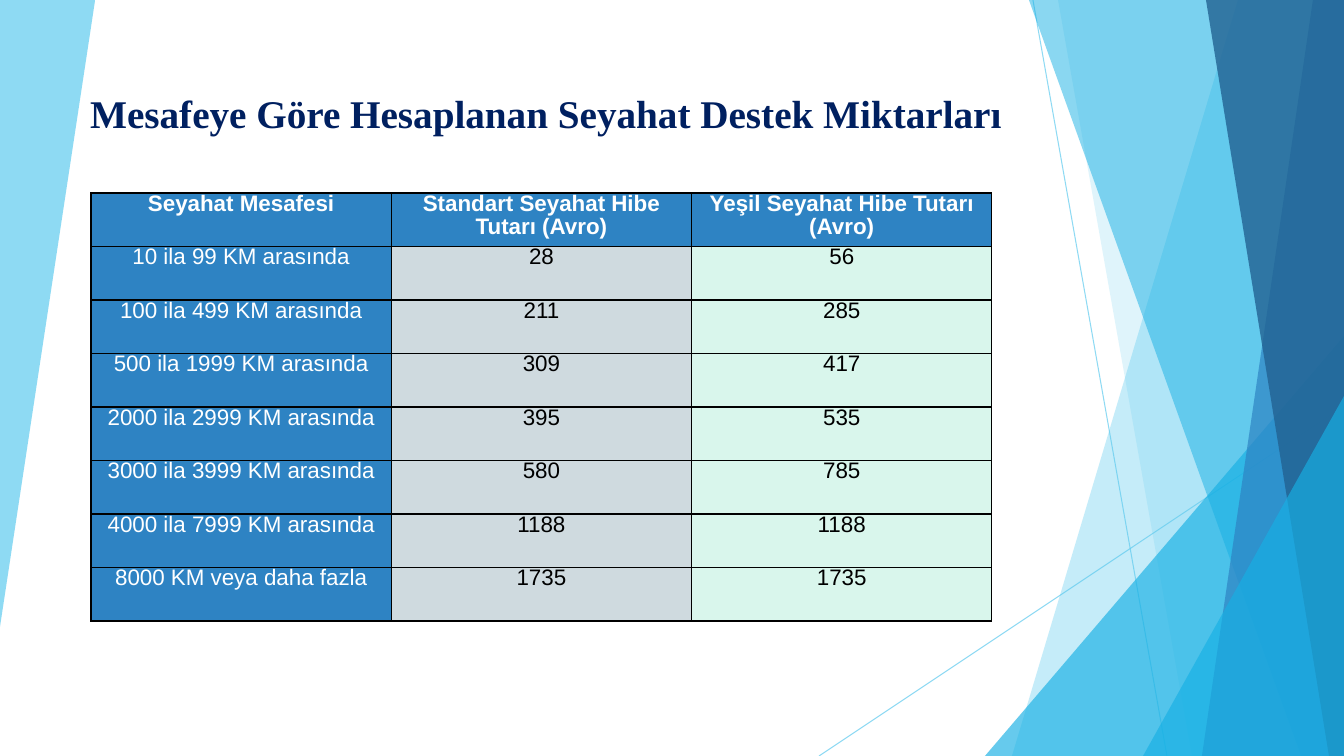
"""Builds the slide with the travel support amounts by distance."""
import pptx
import pptx.dml.color
import pptx.enum.shapes
import pptx.enum.text
import pptx.oxml
import pptx.oxml.ns
import pptx.util

PIXEL = 914400 / 100.8
NAMESPACE = pptx.oxml.ns.nsdecls("a")


def px(*lengths):
    return [pptx.util.Emu(round(length * PIXEL)) for length in lengths]


def paint(color_owner, color, opacity=100):
    if hasattr(color_owner, "solid"):
        color_owner.solid()
        color_owner = color_owner.fore_color
    color_owner.rgb = pptx.dml.color.RGBColor.from_string(color)
    if opacity < 100:
        color_owner._xFill[0].append(pptx.oxml.parse_xml(
            f'<a:alpha {NAMESPACE} val="{opacity * 1000}"/>'))


presentation = pptx.Presentation()
presentation.slide_width, presentation.slide_height = px(1344, 756)
slide = presentation.slides.add_slide(presentation.slide_layouts[5])
shapes = slide.shapes

rays = [((1033, 0), (1167, 756)), ((1344, 406), (819, 756))]
for start, end in rays:
    ray = shapes.add_connector(
        pptx.enum.shapes.MSO_CONNECTOR.STRAIGHT, *px(*start, *end))
    ray.line.width = pptx.util.Pt(0.75)
    paint(ray.line.fill, "5FCBEF", 70)
    ray._element.spPr.append(pptx.oxml.parse_xml(f"<a:effectLst {NAMESPACE}/>"))

facets = [
    ("outline", [(0, 0), (95, 0), (95, 1), (0, 627)], "5FCBEF", 70),
    ("outline", [(1238, 0), (1344, 0), (1344, 756), (1012, 756)], "5FCBEF", 36),
    ("outline", [(1058, 0), (1344, 0), (1344, 756), (1192, 756)], "5FCBEF", 20),
    ("triangle", (985, 336, 359, 420), "17B0E4", 66),
    ("outline", [(1029, 0), (1344, 0), (1344, 756), (1301, 756)], "17B0E4", 50),
    ("outline", [(1313, 0), (1344, 0), (1344, 756), (1202, 756)], "2E83C3", 70),
    ("outline", [(1206, 0), (1344, 0), (1344, 756), (1329, 756)], "226292", 80),
    ("triangle", (1143, 396, 201, 360), "17B0E4", 66),
]
for kind, geometry, color, opacity in facets:
    if kind == "triangle":
        facet = shapes.add_shape(
            pptx.enum.shapes.MSO_SHAPE.ISOSCELES_TRIANGLE, *px(*geometry))
        facet.adjustments[0] = 1
    else:
        builder = shapes.build_freeform(*geometry[0], scale=PIXEL)
        builder.add_line_segments(geometry[1:])
        facet = builder.convert_to_shape()
    facet.shadow.inherit = False
    facet.line.fill.background()
    paint(facet.fill, color, opacity)

title = shapes.title
title.left, title.top, title.width, title.height = px(80, 64, 951, 77)
title.text_frame.text = "Mesafeye Göre Hesaplanan Seyahat Destek Miktarları"
title.text_frame.vertical_anchor = pptx.enum.text.MSO_ANCHOR.BOTTOM
paragraph = title.text_frame.paragraphs[0]
paragraph.alignment = pptx.enum.text.PP_ALIGN.LEFT
paragraph.font.name = "Times New Roman"
paragraph.font.size = pptx.util.Pt(28)
paragraph.font.bold = True
paint(paragraph.font.color, "002060")

rows = [
    ("Seyahat Mesafesi", "Standart Seyahat Hibe Tutarı (Avro)",
     "Yeşil Seyahat Hibe Tutarı (Avro)"),
    ("10 ila 99 KM arasında", "28", "56"),
    ("100 ila 499 KM arasında", "211", "285"),
    ("500 ila 1999 KM arasında", "309", "417"),
    ("2000 ila 2999 KM arasında", "395", "535"),
    ("3000 ila 3999 KM arasında", "580", "785"),
    ("4000 ila 7999 KM arasında", "1188", "1188"),
    ("8000 KM veya daha fazla", "1735", "1735"),
]
column_fills = ["2E83C3", "CFDADF", "D9F6EC"]
table = shapes.add_table(len(rows), 3, *px(91, 193, 901, 428)).table
for row_index, row in enumerate(rows):
    for column_index, text in enumerate(row):
        is_header = row_index == 0
        is_blue = is_header or column_index == 0
        cell = table.cell(row_index, column_index)
        cell.text = text
        cell.margin_left = cell.margin_right = cell.margin_top = cell.margin_bottom = 0
        for side in ("lnL", "lnR", "lnT", "lnB"):
            cell._tc.get_or_add_tcPr().append(pptx.oxml.parse_xml(
                f'<a:{side} {NAMESPACE} w="12700"><a:solidFill>'
                f'<a:srgbClr val="000000"/></a:solidFill></a:{side}>'))
        paint(cell.fill, column_fills[0] if is_blue else column_fills[column_index])
        paragraph = cell.text_frame.paragraphs[0]
        paragraph.alignment = pptx.enum.text.PP_ALIGN.CENTER
        paragraph.line_spacing = 0.93
        paragraph.font.name = "Arial"
        paragraph.font.size = pptx.util.Pt(16)
        paragraph.font.bold = is_header
        paint(paragraph.font.color, "FFFFFF" if is_blue else "000000")

presentation.save("out.pptx")
